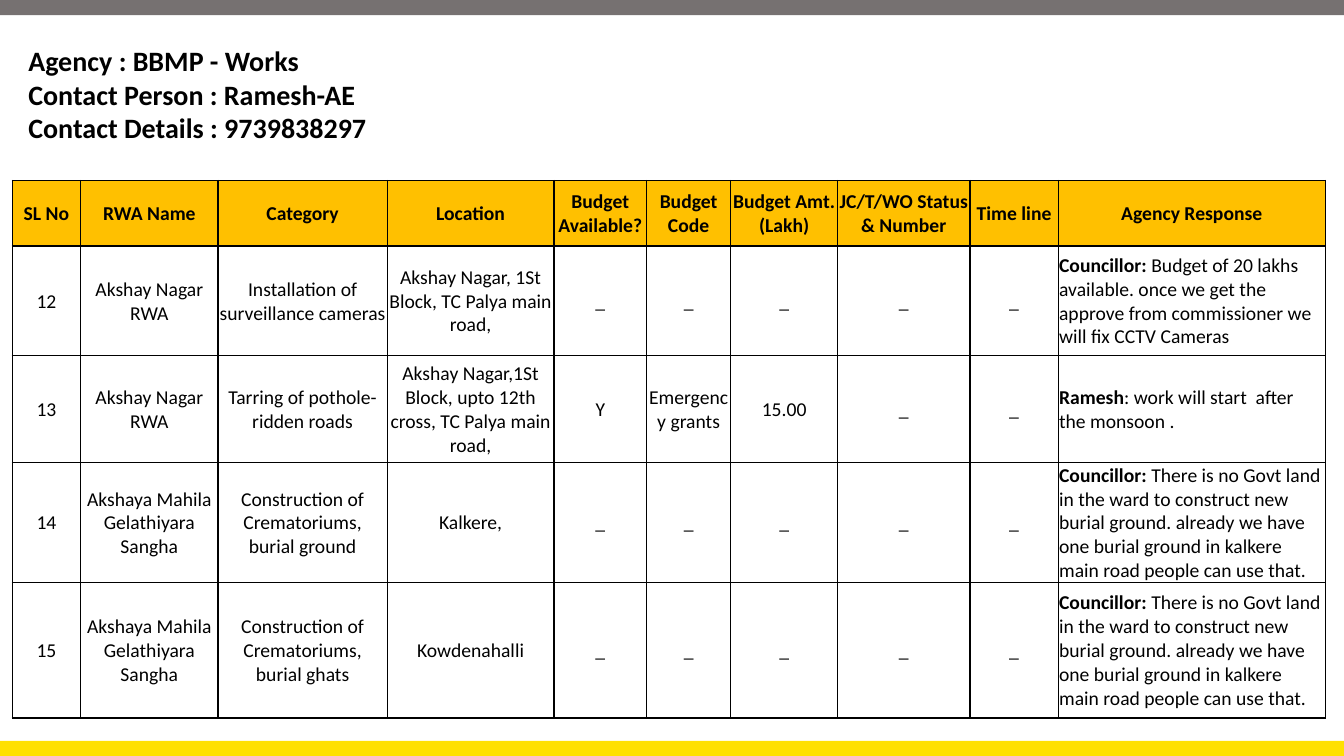
from dataclasses import dataclass
from lxml import etree
from pptx import Presentation
from pptx.dml.color import RGBColor
from pptx.enum.shapes import MSO_SHAPE
from pptx.enum.text import MSO_ANCHOR, PP_ALIGN
from pptx.oxml.ns import qn
from pptx.util import Pt

RECTANGLE = MSO_SHAPE.RECTANGLE
TOP, MIDDLE = MSO_ANCHOR.TOP, MSO_ANCHOR.MIDDLE
LEFT, CENTER = PP_ALIGN.LEFT, PP_ALIGN.CENTER


@dataclass(frozen=True)
class Theme:
    font: str = "Calibri"
    ink: str = "000000"
    header: str = "FFC000"
    top_bar: str = "767171"
    bottom_bar: str = "FFE000"
    title_size: int = 20
    table_size: int = 14


THEME = Theme()
SLIDE_WIDTH, SLIDE_HEIGHT, BAR_HEIGHT = 960, 540, 10.8
COLUMN_WIDTHS = [49, 98, 121, 119, 66.25, 60, 76.5, 94.5, 63, 191]
ROW_HEIGHTS = [46.8, 78.5, 76.3, 82.1, 96.5]
CONTACT_LINES = [
    "Agency : BBMP - Works",
    "Contact Person : Ramesh-AE",
    "Contact Details : 9739838297",
]
HEADERS = [
    "SL No", "RWA Name", "Category", "Location", "Budget Available?", "Budget Code",
    "Budget Amt. (Lakh)", "JC/T/WO Status & Number", "Time line", "Agency Response",
]
BLANK = "_"
BURIAL_RESPONSE = (
    "Councillor:",
    " There is no Govt land in the ward to construct new burial ground. "
    "already we have one burial ground in kalkere main road people can use that.",
)
REQUESTS = [
    ["12", "Akshay Nagar RWA", "Installation of surveillance cameras",
     "Akshay Nagar, 1St Block, TC Palya main road,", *[BLANK] * 5,
     ("Councillor:", " Budget of 20 lakhs available. once we get the approve "
      "from commissioner we will fix CCTV Cameras")],
    ["13", "Akshay Nagar RWA", "Tarring of pothole-ridden roads",
     "Akshay Nagar,1St Block, upto 12th cross, TC Palya main road,",
     "Y", "Emergency grants", "15.00", BLANK, BLANK,
     ("Ramesh", ": work will start  after the monsoon .")],
    ["14", "Akshaya Mahila Gelathiyara Sangha",
     "Construction of Crematoriums, burial ground", "Kalkere,", *[BLANK] * 5,
     BURIAL_RESPONSE],
    ["15", "Akshaya Mahila Gelathiyara Sangha",
     "Construction of Crematoriums, burial ghats", "Kowdenahalli", *[BLANK] * 5,
     BURIAL_RESPONSE],
]


def style_paragraph(para, size, bold, alignment):
    para.alignment = alignment
    para.font.name = THEME.font
    para.font.size = Pt(size)
    para.font.bold = bold
    para.font.color.rgb = RGBColor.from_string(THEME.ink)


def add_borders(cell):
    properties = cell._tc.get_or_add_tcPr()
    for side in ("lnL", "lnR", "lnT", "lnB"):
        line = etree.SubElement(properties, qn(f"a:{side}"), w=str(Pt(1)))
        fill = etree.SubElement(line, qn("a:solidFill"))
        etree.SubElement(fill, qn("a:srgbClr"), val=THEME.ink)


deck = Presentation()
deck.slide_width, deck.slide_height = Pt(SLIDE_WIDTH), Pt(SLIDE_HEIGHT)
page = deck.slides.add_slide(deck.slide_layouts[5])

for bar_top, color in ((SLIDE_HEIGHT - BAR_HEIGHT, THEME.bottom_bar), (0, THEME.top_bar)):
    bar = page.shapes.add_shape(RECTANGLE, 0, Pt(bar_top), Pt(SLIDE_WIDTH), Pt(BAR_HEIGHT))
    bar.shadow.inherit = False
    bar.fill.solid()
    bar.fill.fore_color.rgb = RGBColor.from_string(color)
    bar.line.fill.background()

title = page.shapes.title
title.left, title.top, title.width, title.height = Pt(13), Pt(27.4), Pt(932.4), Pt(80)
title.text_frame.text = "\n".join(CONTACT_LINES)
title.text_frame.vertical_anchor = TOP
for para in title.text_frame.paragraphs:
    style_paragraph(para, THEME.title_size, True, LEFT)

table = page.shapes.add_table(
    len(ROW_HEIGHTS), len(COLUMN_WIDTHS), Pt(8.7), Pt(128.9),
    Pt(sum(COLUMN_WIDTHS)), Pt(sum(ROW_HEIGHTS)),
).table
for column, width in zip(table.columns, COLUMN_WIDTHS):
    column.width = Pt(width)
for row, height in zip(table.rows, ROW_HEIGHTS):
    row.height = Pt(height)

for row_index, values in enumerate([HEADERS, *REQUESTS]):
    is_header = row_index == 0
    for column_index, value in enumerate(values):
        cell = table.cell(row_index, column_index)
        cell.margin_left = cell.margin_right = cell.margin_top = Pt(0.7)
        cell.margin_bottom = 0
        cell.vertical_anchor = MIDDLE
        add_borders(cell)
        if is_header:
            cell.fill.solid()
            cell.fill.fore_color.rgb = RGBColor.from_string(THEME.header)
        else:
            cell.fill.background()
        para = cell.text_frame.paragraphs[0]
        is_response = isinstance(value, tuple)
        style_paragraph(para, THEME.table_size, is_header, LEFT if is_response else CENTER)
        for part_index, part in enumerate(value if is_response else [value]):
            span = para.add_run()
            span.text = part
            if is_response:
                span.font.bold = part_index == 0

deck.save("out.pptx")
